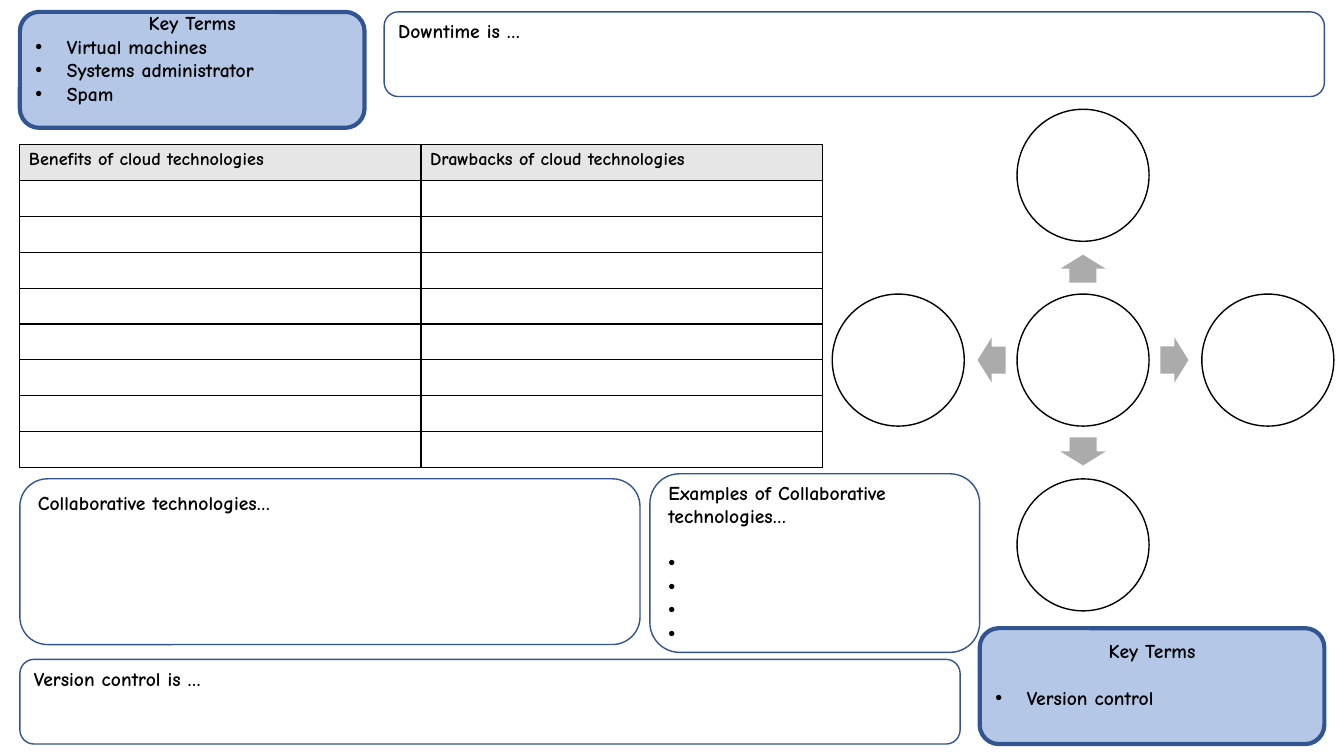
"""Build a cloud technologies revision worksheet slide."""
from math import cos, radians, sin

from lxml.etree import SubElement
from pptx import Presentation
from pptx.dml.color import RGBColor
from pptx.enum.shapes import MSO_SHAPE
from pptx.enum.text import MSO_ANCHOR, PP_ALIGN
from pptx.oxml.ns import qn
from pptx.util import Pt

BLACK = RGBColor(0x00, 0x00, 0x00)
WHITE = RGBColor(0xFF, 0xFF, 0xFF)
NAVY = RGBColor(0x32, 0x54, 0x91)
PALE_BLUE = RGBColor(0xB4, 0xC7, 0xE7)
HEADER_GREY = RGBColor(0xE7, 0xE6, 0xE6)
ARROW_GREY = RGBColor(0xAB, 0xAB, 0xAB)


class Worksheet:
    font_name = "Comic Neue"
    text_size = 14
    table_size = 13
    line_height = 16.8
    bullet_indent = 22.5

    def __init__(self, slide):
        self.slide = slide

    def shape(self, kind, left, top, width, height, fill=None, line=None, weight=1):
        shape = self.slide.shapes.add_shape(kind, Pt(left), Pt(top), Pt(width), Pt(height))
        shape.shadow.inherit = False
        if fill is None:
            shape.fill.background()
        else:
            shape.fill.solid()
            shape.fill.fore_color.rgb = fill
        if line is None:
            shape.line.fill.background()
        else:
            shape.line.color.rgb = line
            shape.line.width = Pt(weight)
        return shape

    def run(self, paragraph, text, size):
        run = paragraph.add_run()
        run.text = text
        run.font.name = self.font_name
        run.font.size = Pt(size)
        run.font.bold = True
        run.font.color.rgb = BLACK

    def bullet(self, paragraph):
        properties = paragraph._p.get_or_add_pPr()
        properties.set("marL", str(Pt(self.bullet_indent)))
        properties.set("indent", str(-Pt(self.bullet_indent)))
        SubElement(properties, qn("a:buFont"), typeface="Arial")
        SubElement(properties, qn("a:buChar"), char="•")

    def box(self, left, top, width, height, heading, bullets=(), lines_up=0, gap=0,
            fill=None, weight=1, heading_align=PP_ALIGN.LEFT):
        shape = self.shape(MSO_SHAPE.ROUNDED_RECTANGLE, left, top, width, height,
                           fill, NAVY, weight)
        frame = shape.text_frame
        frame.word_wrap = True
        frame.vertical_anchor = MSO_ANCHOR.MIDDLE
        frame.margin_top = 0
        frame.margin_bottom = Pt(2 * lines_up * self.line_height)
        paragraph = frame.paragraphs[0]
        paragraph.alignment = heading_align
        self.run(paragraph, heading, self.text_size)
        for index, text in enumerate(bullets):
            paragraph = frame.add_paragraph()
            paragraph.alignment = PP_ALIGN.LEFT
            if index == 0:
                paragraph.space_before = Pt(gap)
            self.bullet(paragraph)
            self.run(paragraph, text, self.text_size)

    def key_terms(self, left, top, terms, gap=0):
        self.box(left, top, 246.2, 82.8, "Key Terms", terms, 0.5, gap,
                 PALE_BLUE, 3, PP_ALIGN.CENTER)

    def borders(self, cell):
        properties = cell._tc.get_or_add_tcPr()
        for side in ("lnL", "lnR", "lnT", "lnB"):
            line = SubElement(properties, qn(f"a:{side}"), w=str(Pt(1)))
            fill = SubElement(line, qn("a:solidFill"))
            SubElement(fill, qn("a:srgbClr"), val=str(BLACK))

    def table(self, left, top, width, height, headings, row_count):
        frame = self.slide.shapes.add_table(row_count, len(headings), Pt(left), Pt(top),
                                            Pt(width), Pt(height))
        table = frame.table
        table.horz_banding = False
        for row_index, row in enumerate(table.rows):
            row.height = Pt(height / row_count)
            for cell, heading in zip(row.cells, headings):
                self.borders(cell)
                cell.margin_left = cell.margin_right = Pt(6.5)
                cell.margin_top = cell.margin_bottom = Pt(3)
                paragraph = cell.text_frame.paragraphs[0]
                if row_index == 0:
                    cell.fill.solid()
                    cell.fill.fore_color.rgb = HEADER_GREY
                    self.run(paragraph, heading, self.table_size)
                else:
                    cell.fill.background()
                    SubElement(paragraph._p, qn("a:endParaRPr"),
                               sz=str(self.table_size * 100))

    def circle(self, center_x, center_y, diameter=94.3):
        self.shape(MSO_SHAPE.OVAL, center_x - diameter / 2, center_y - diameter / 2,
                   diameter, diameter, WHITE, BLACK)

    def arrow(self, center_x, center_y, angle, width=20, height=32.2):
        arrow = self.shape(MSO_SHAPE.RIGHT_ARROW, center_x - width / 2,
                           center_y - height / 2, width, height, ARROW_GREY)
        arrow.adjustments[0] = 0.6
        arrow.adjustments[1] = 0.5
        arrow.rotation = angle

    def radial_diagram(self, center_x, center_y, circle_distance, arrow_distance):
        self.circle(center_x, center_y)
        for angle in (270, 0, 90, 180):
            across, down = cos(radians(angle)), sin(radians(angle))
            self.arrow(center_x + arrow_distance * across,
                       center_y + arrow_distance * down, angle)
            self.circle(center_x + circle_distance * across,
                        center_y + circle_distance * down)


def main():
    presentation = Presentation()
    presentation.slide_width = Pt(960)
    presentation.slide_height = Pt(540)
    worksheet = Worksheet(presentation.slides.add_slide(presentation.slide_layouts[6]))

    worksheet.box(274.4, 8.5, 671.6, 60.5, "Downtime is …", lines_up=1)
    worksheet.key_terms(14.2, 8.5, ("Virtual machines", "Systems administrator", "Spam"))
    worksheet.table(14.2, 103.5, 573.2, 230.6,
                    ("Benefits of cloud technologies", "Drawbacks of cloud technologies"), 9)
    worksheet.key_terms(699.8, 448.7, ("Version control",), gap=worksheet.line_height)
    worksheet.box(14.2, 471, 671.6, 60.5, "Version control is …", lines_up=1)
    worksheet.radial_diagram(773.6, 257.2, 132, 65.3)
    worksheet.box(14.2, 342, 443, 118.4, "Collaborative technologies…", lines_up=2.5)
    worksheet.box(464.2, 338.4, 235.6, 127.6, "Examples of Collaborative technologies…",
                  [" "] * 4, gap=worksheet.line_height)

    presentation.save("out.pptx")


if __name__ == "__main__":
    main()
